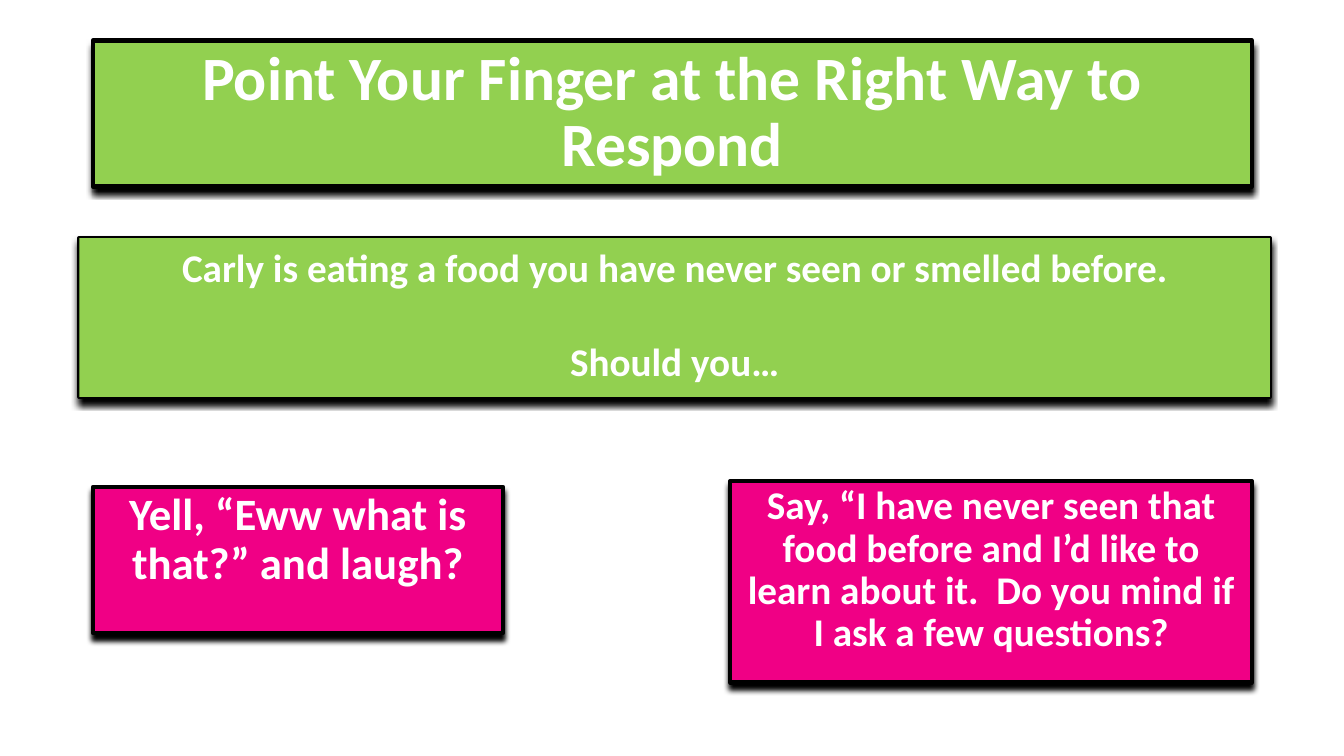
import math

import pptx
import pptx.dml.color
import pptx.enum.text
import pptx.oxml
import pptx.oxml.ns
import pptx.util

Cm = pptx.util.Cm
Pt = pptx.util.Pt

GREEN, PINK, BLACK, WHITE = "92D050", "F00085", "000000", "FFFFFF"
LEFT = 2.34


def color(hex_string):
    return pptx.dml.color.RGBColor.from_string(hex_string)


class SocialSkillsSlide:
    """Holds the card style and the current slide."""

    font = "Calibri"
    border = 3
    shadow = (
        '<a:outerShdw %s blurRad="50800" dist="50800" dir="5400000" algn="t" rotWithShape="0">'
        '<a:srgbClr val="%s"/></a:outerShdw>' % (pptx.oxml.ns.nsdecls("a"), BLACK)
    )

    def __init__(self, deck):
        self.slide = deck.slides.add_slide(deck.slide_layouts[3])

    def decorate(self, shape, fill):
        shape.fill.solid()
        shape.fill.fore_color.rgb = color(fill)
        shape.line.color.rgb = color(BLACK)
        shape.line.width = Pt(self.border)
        shape.shadow.inherit = False
        effects = shape.element.spPr.find(pptx.oxml.ns.qn("a:effectLst"))
        effects.append(pptx.oxml.parse_xml(self.shadow))

    def format_text(self, paragraph, size):
        paragraph.alignment = pptx.enum.text.PP_ALIGN.CENTER
        paragraph.font.name = self.font
        paragraph.font.size = Pt(size)
        paragraph.font.bold = True
        paragraph.font.color.rgb = color(WHITE)

    def card(self, index, text, box, fill, size, anchor):
        """Place a title or body placeholder as a bordered card."""
        holder = self.slide.placeholders[index]
        holder.left, holder.top, holder.width, holder.height = map(Cm, box)
        self.decorate(holder, fill)
        frame = holder.text_frame
        frame.text = text
        frame.word_wrap = True
        frame.auto_size = pptx.enum.text.MSO_AUTO_SIZE.NONE
        frame.vertical_anchor = anchor
        paragraph = frame.paragraphs[0]
        properties = paragraph._p.get_or_add_pPr()
        properties.set("marL", "0")
        properties.set("indent", "0")
        properties.append(pptx.oxml.parse_xml("<a:buNone %s/>" % pptx.oxml.ns.nsdecls("a")))
        paragraph.line_spacing = 0.9
        paragraph.space_before = Pt(0)
        self.format_text(paragraph, size)

    def rough_outline(self, box, phase):
        """Draw a rectangle whose edges waver as if drawn by hand."""
        left, top, width, height = box
        corners = [(left, top), (left + width, top),
                   (left + width, top + height), (left, top + height)]
        points = []
        for side, (x, y) in enumerate(corners):
            next_x, next_y = corners[(side + 1) % 4]
            length = math.hypot(next_x - x, next_y - y)
            steps = round(length / 0.2)
            for step in range(steps):
                part = step / steps
                along = part * length
                wave = 0.04 * math.sin(1.9 * along + phase + side)
                wave += 0.03 * math.sin(3.1 * along + 2 * phase)
                wave *= min(1, 8 * part, 8 * (1 - part))
                across = wave if side % 2 == 0 else 0
                points.append((x + part * (next_x - x) + wave - across,
                               y + part * (next_y - y) + across))
        builder = self.slide.shapes.build_freeform(
            *points[0], scale=float(Cm(1)))
        builder.add_line_segments(points[1:], close=True)
        return builder.convert_to_shape()

    def rough_card(self, lines, box, fill, size, gap):
        """Lay a borderless wavy panel with text over a wavy border."""
        self.decorate(self.rough_outline(box, 0), fill)
        panel = self.rough_outline(box, 2)
        panel.shadow.inherit = False
        panel.fill.solid()
        panel.fill.fore_color.rgb = color(fill)
        panel.line.fill.background()
        frame = panel.text_frame
        frame.word_wrap = True
        frame.vertical_anchor = pptx.enum.text.MSO_ANCHOR.TOP
        frame.text = "\n".join(lines)
        for paragraph in frame.paragraphs:
            self.format_text(paragraph, size)
        for paragraph in frame.paragraphs[1:]:
            paragraph.space_before = Pt(gap)


def main():
    deck = pptx.Presentation()
    deck.slide_width, deck.slide_height = Cm(33.87), Cm(19.05)
    page = SocialSkillsSlide(deck)
    anchors = pptx.enum.text.MSO_ANCHOR

    # Title
    page.card(0, "Point Your Finger at the Right Way to Respond",
              (LEFT, 1.02, 29.21, 3.68), GREEN, 44, anchors.MIDDLE)

    # Two possible answers
    page.card(1, "Yell, “Eww what is that?” and laugh?",
              (LEFT, 12.27, 10.34, 3.68), PINK, 32, anchors.TOP)
    page.card(2, "Say, “I have never seen that food before and I’d like to "
              "learn about it.  Do you mind if I ask a few questions?",
              (18.4, 12.12, 13.15, 5.08), PINK, 28, anchors.TOP)

    # Situation
    page.rough_card(["Carly is eating a food you have never seen or smelled before.",
                     "Should you…"],
                    (LEFT, 6.4, 29.49, 3.84), GREEN, 28, 34)

    deck.save("out.pptx")


if __name__ == "__main__":
    main()
